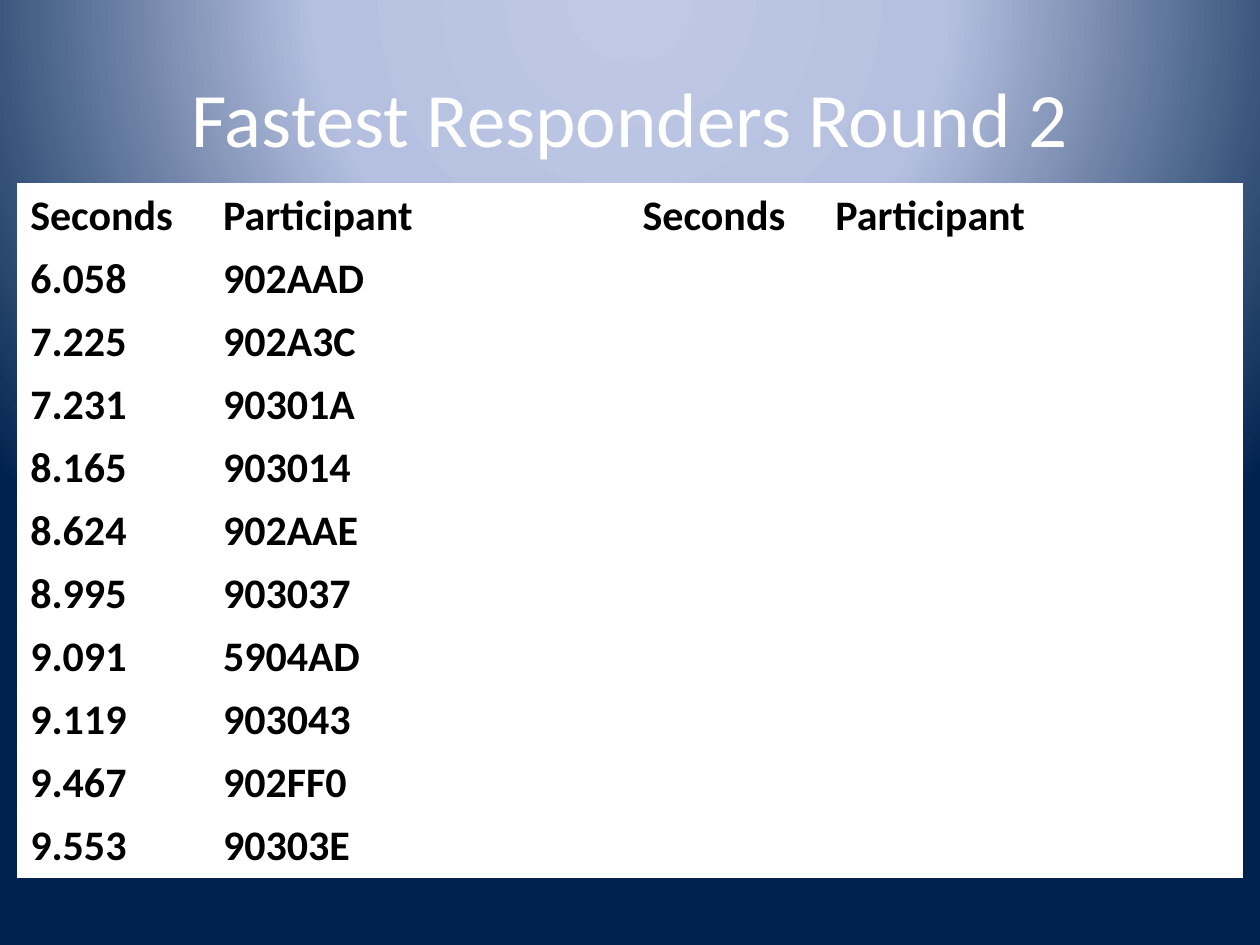
"""Build the slide that ranks the fastest responders of round 2."""
from pptx import Presentation
from pptx.dml.color import RGBColor
from pptx.enum.text import MSO_ANCHOR, PP_ALIGN
from pptx.oxml import parse_xml
from pptx.oxml.ns import nsdecls
from pptx.util import Inches, Pt

TITLE = "Fastest Responders Round 2"
HEADERS = ("Seconds", "Participant")
RESPONDERS = [
    ("6.058", "902AAD"),
    ("7.225", "902A3C"),
    ("7.231", "90301A"),
    ("8.165", "903014"),
    ("8.624", "902AAE"),
    ("8.995", "903037"),
    ("9.091", "5904AD"),
    ("9.119", "903043"),
    ("9.467", "902FF0"),
    ("9.553", "90303E"),
]
COLUMN_WIDTHS = (1.53, 3.33) * 2
ROW_HEIGHT = 0.5
FONT = "Calibri"
WHITE, BLACK = "FFFFFF", "000000"
GRADIENT_STOPS = [(0, "BFC9E5"), (40, "B5C0E0"), (100, "00234D")]


def color(hex_string):
    return RGBColor.from_string(hex_string)


def add_run(paragraph, text, size, hex_string, bold=False):
    run = paragraph.add_run()
    run.text = text
    run.font.name = FONT
    run.font.size = Pt(size)
    run.font.bold = bold
    run.font.color.rgb = color(hex_string)


def set_background(slide):
    stops = "".join(
        f'<a:gs pos="{position * 1000}"><a:srgbClr val="{hex_string}"/></a:gs>'
        for position, hex_string in GRADIENT_STOPS
    )
    background = parse_xml(
        f'<p:bg {nsdecls("p", "a")}><p:bgPr><a:gradFill rotWithShape="1">'
        f'<a:gsLst>{stops}</a:gsLst><a:path path="circle">'
        '<a:fillToRect l="50000" t="-80000" r="50000" b="180000"/></a:path>'
        "</a:gradFill><a:effectLst/></p:bgPr></p:bg>"
    )
    slide.element.cSld.insert(0, background)


def add_title(slide):
    box = slide.shapes.add_textbox(Inches(0.5), Inches(0.3), Inches(9), Inches(1.25))
    frame = box.text_frame
    frame.word_wrap = True
    frame.vertical_anchor = MSO_ANCHOR.MIDDLE
    paragraph = frame.paragraphs[0]
    paragraph.alignment = PP_ALIGN.CENTER
    add_run(paragraph, TITLE, 44, WHITE)


def add_responder_table(slide):
    rows = [HEADERS * 2] + [responder + ("", "") for responder in RESPONDERS]
    table = slide.shapes.add_table(
        len(rows), len(COLUMN_WIDTHS), Inches(0.14), Inches(1.46),
        Inches(sum(COLUMN_WIDTHS)), Inches(ROW_HEIGHT * len(rows)),
    ).table
    table.first_row = False
    table.horz_banding = False
    for column, width in zip(table.columns, COLUMN_WIDTHS):
        column.width = Inches(width)
    for row, texts in zip(table.rows, rows):
        row.height = Inches(ROW_HEIGHT)
        for cell, text in zip(row.cells, texts):
            cell.fill.solid()
            cell.fill.fore_color.rgb = color(WHITE)
            if text:
                add_run(cell.text_frame.paragraphs[0], text, 24, BLACK, bold=True)


def main():
    presentation = Presentation()
    presentation.slide_width = Inches(10)
    presentation.slide_height = Inches(7.5)
    slide = presentation.slides.add_slide(presentation.slide_layouts[6])
    set_background(slide)
    add_title(slide)
    add_responder_table(slide)
    presentation.save("out.pptx")


if __name__ == "__main__":
    main()
